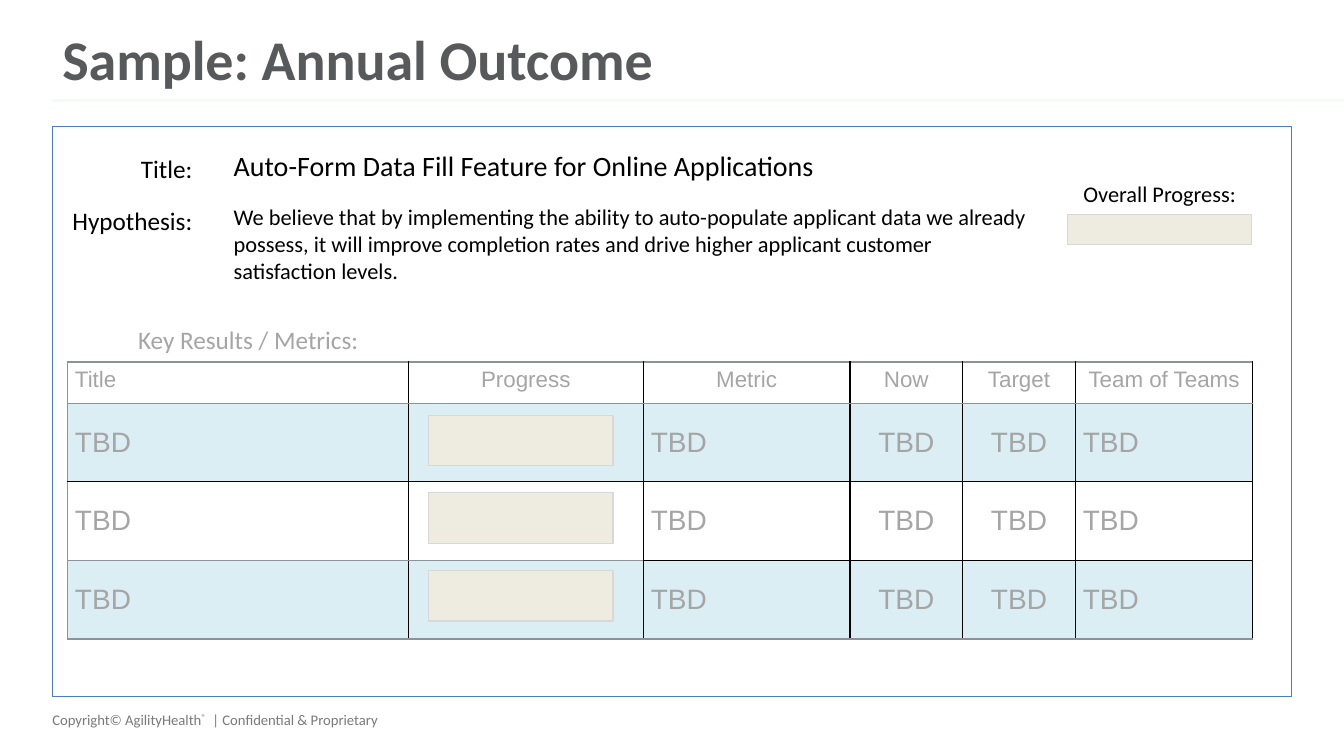
from lxml import etree
from pptx import Presentation
from pptx.dml.color import RGBColor
from pptx.enum.shapes import MSO_CONNECTOR, MSO_SHAPE
from pptx.enum.text import MSO_ANCHOR, PP_ALIGN
from pptx.oxml.ns import qn
from pptx.util import Cm, Pt

LEFT, CENTER, RIGHT = PP_ALIGN.LEFT, PP_ALIGN.CENTER, PP_ALIGN.RIGHT
TOP, MIDDLE = MSO_ANCHOR.TOP, MSO_ANCHOR.MIDDLE
RECT, STRAIGHT = MSO_SHAPE.RECTANGLE, MSO_CONNECTOR.STRAIGHT

COLORS = {
    "heading": "58595B", "text": "000000", "muted": "A5A5A5", "footer": "7A7A7A",
    "rule": "F3FCF4", "frame": "4A7DBA", "bar": "EEECE1", "bar_edge": "D8D8D8",
    "band": "DBEEF4", "teal": "4BACC6", "grey": "8C929A", "black": "000000",
}


def rgb(name):
    return RGBColor.from_string(COLORS[name])


def write(tf, text, size=16, color="text", font="Calibri", bold=False,
          align=LEFT, anchor=TOP, pad=(0.25, 0.13)):
    """Put one paragraph in a text frame; text after '^' starts with a raised character."""
    tf.word_wrap = True
    tf.vertical_anchor = anchor
    tf.margin_left = tf.margin_right = Cm(pad[0])
    tf.margin_top = tf.margin_bottom = Cm(pad[1])
    p = tf.paragraphs[0]
    p.alignment = align
    before, _, after = text.partition("^")
    for part, raised in ((before, False), (after[:1], True), (after[1:], False)):
        if not part:
            continue
        r = p.add_run()
        r.text = part
        r.font.size, r.font.name, r.font.bold = Pt(size), font, bold
        r.font.color.rgb = rgb(color)
        if raised:
            r.font._element.set("baseline", "30000")
    return p


prs = Presentation()
prs.slide_width, prs.slide_height = Cm(33.87), Cm(19.05)
s = prs.slides.add_slide(prs.slide_layouts[6])

# Rule under the heading
rule = s.shapes.add_connector(STRAIGHT, Cm(1.32), Cm(2.54), Cm(33.87), Cm(2.54))
rule.line.color.rgb = rgb("rule")
rule.line.width = Pt(2)
etree.SubElement(rule._element.spPr, qn("a:effectLst"))

# Text boxes
label_pad = (0.23, 0.1)
hypothesis = ("We believe that by implementing the ability to auto-populate applicant data "
              "we already possess, it will improve completion rates and drive higher "
              "applicant customer satisfaction levels.")
texts = [
    ("Copyright© AgilityHealth^®  | Confidential & Proprietary", (1.07, 17.78, 11.43, 0.71),
     dict(size=10.5, color="footer")),
    ("Title:", (1.3, 3.76, 3.78, 0.99), dict(size=18, align=RIGHT, pad=label_pad)),
    ("Hypothesis:", (1.3, 5.08, 3.78, 0.99), dict(size=18, align=RIGHT, pad=label_pad)),
    ("Key Results / Metrics:", (3.25, 8.08, 8.84, 0.99),
     dict(size=18, color="muted", pad=label_pad)),
    ("Overall Progress:", (26.9, 4.45, 4.65, 0.94), dict(align=CENTER, pad=label_pad)),
    ("Auto-Form Data Fill Feature for Online Applications", (5.64, 3.61, 20.6, 1.12),
     dict(size=20)),
    (hypothesis, (5.64, 5, 20.6, 2.31), {}),
]
for text, box, style in texts:
    write(s.shapes.add_textbox(*map(Cm, box)).text_frame, text, **style)

heading = s.shapes.add_textbox(Cm(1.32), Cm(0.69), Cm(31.22), Cm(1.78))
write(heading.text_frame, "Sample: Annual Outcome", size=40, color="heading",
      bold=True, anchor=MIDDLE).line_spacing = 0.9

# Key results table
header = ["Title", "Progress", "Metric", "Now", "Target", "Team of Teams"]
result = ["TBD", "", "TBD", "TBD", "TBD", "TBD"]
rows = [header] + [result] * 3
col_widths = [8.59, 5.92, 5.21, 2.84, 2.84, 4.47]
row_heights = [1.04] + [1.98] * 3
frame = s.shapes.add_table(len(rows), len(header), Cm(1.7), Cm(9.12),
                           Cm(sum(col_widths)), Cm(sum(row_heights)))
table = frame.table
table.first_row = table.horz_banding = False
for column, width in zip(table.columns, col_widths):
    column.width = Cm(width)
for row, height in zip(table.rows, row_heights):
    row.height = Cm(height)

for i, row in enumerate(rows):
    for j, text in enumerate(row):
        cell = table.cell(i, j)
        is_header = i == 0
        centered = j in (3, 4) or (is_header and j > 0)
        write(cell.text_frame, text, size=16 if is_header else 20, color="muted",
              font="Arial", align=CENTER if centered else LEFT)
        cell.vertical_anchor = TOP if is_header else MIDDLE
        cell.margin_left = cell.margin_right = Cm(0.19)
        cell.margin_top = cell.margin_bottom = Cm(0.13)
        # Horizontal rules from the top edge of the table to its bottom edge
        rules = ["grey", "teal", "black", "grey" if j < 2 else "black", "grey"]
        edges = {"lnL": "black" if j else "grey", "lnR": "black",
                 "lnT": rules[i], "lnB": rules[i + 1]}
        tcPr = cell._tc.get_or_add_tcPr()
        for tag, color in edges.items():
            ln = etree.SubElement(tcPr, qn(f"a:{tag}"), w=str(Pt(1)))
            fill = etree.SubElement(ln, qn("a:solidFill"))
            etree.SubElement(fill, qn("a:srgbClr"), val=COLORS[color])
        if i % 2:
            cell.fill.solid()
            cell.fill.fore_color.rgb = rgb("band")
        else:
            cell.fill.background()

# Outer frame, overall progress bar and one bar per result
boxes = [((1.32, 3.18, 31.22, 14.38), None, "frame"),
         ((26.9, 5.41, 4.65, 0.76), "bar", "bar_edge")]
boxes += [((10.8, 10.46 + 1.96 * i, 4.65, 1.27), "bar", "bar_edge") for i in range(3)]
for box, fill, edge in boxes:
    sp = s.shapes.add_shape(RECT, *map(Cm, box))
    sp.shadow.inherit = False
    if fill:
        sp.fill.solid()
        sp.fill.fore_color.rgb = rgb(fill)
    else:
        sp.fill.background()
    sp.line.color.rgb = rgb(edge)
    sp.line.width = Pt(0.75)

prs.save("out.pptx")
